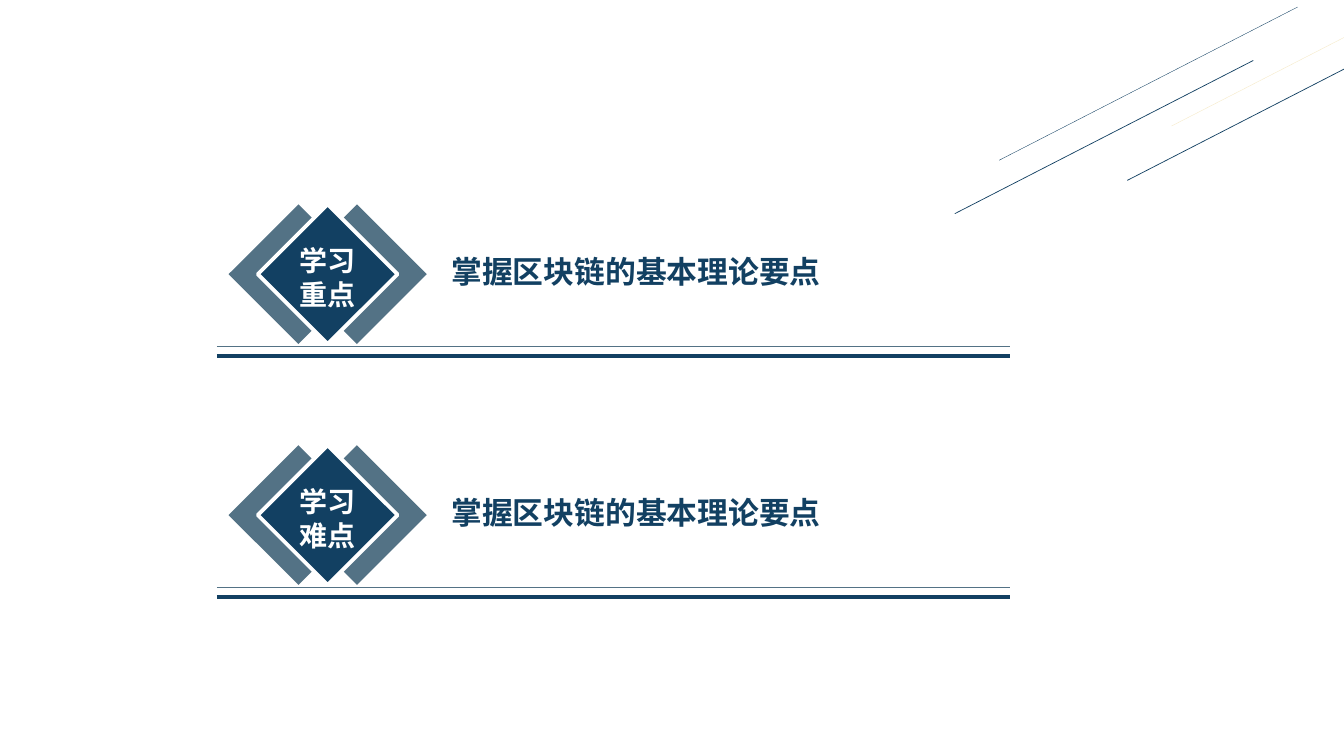
from pptx import Presentation
from pptx.dml.color import RGBColor
from pptx.enum.shapes import MSO_CONNECTOR, MSO_SHAPE
from pptx.enum.text import MSO_AUTO_SIZE, PP_ALIGN
from pptx.oxml.ns import qn
from pptx.util import Inches, Pt
from lxml.etree import SubElement

COLORS = {"navy": "124062", "slate": "537285", "gold": "DCAA1F", "white": "FFFFFF"}
FONT = "Noto Sans CJK SC"


def rgb(name):
    return RGBColor.from_string(COLORS[name])


def add_text(shapes, text, left, top, width, height, *, size, color,
             align=PP_ALIGN.LEFT, spacing=None):
    box = shapes.add_textbox(Inches(left), Inches(top), Inches(width), Inches(height))
    frame = box.text_frame
    frame.text = text
    frame.word_wrap = False
    frame.auto_size = MSO_AUTO_SIZE.SHAPE_TO_FIT_TEXT
    for paragraph in frame.paragraphs:
        paragraph.alignment = align
        if spacing:
            paragraph.line_spacing = spacing
        for run in paragraph.runs:
            run.font.size = Pt(size)
            run.font.bold = True
            run.font.name = FONT
            run.font.color.rgb = rgb(color)
            east_asian = SubElement(run.font._element, qn("a:ea"))
            east_asian.set("typeface", FONT)


def add_line(shapes, x1, y1, x2, y2, color, width, alpha=None):
    line = shapes.add_connector(MSO_CONNECTOR.STRAIGHT, Inches(x1), Inches(y1),
                                Inches(x2), Inches(y2))
    line.line.color.rgb = rgb(color)
    line.line.width = Pt(width)
    properties = line._element.spPr
    if alpha is not None:
        fill = properties.find(".//" + qn("a:srgbClr"))
        SubElement(fill, qn("a:alpha")).set("val", str(alpha * 1000))
    SubElement(properties, qn("a:effectLst"))


def add_diamond(shapes, left, top, side, color, outline=None):
    diamond = shapes.add_shape(MSO_SHAPE.ROUNDED_RECTANGLE, Inches(left), Inches(top),
                               Inches(side), Inches(side))
    diamond.adjustments[0] = 0
    diamond.rotation = 45
    diamond.shadow.inherit = False
    diamond.fill.solid()
    diamond.fill.fore_color.rgb = rgb(color)
    if outline:
        diamond.line.color.rgb = rgb(outline)
        diamond.line.width = Pt(2.75)
    else:
        diamond.line.fill.background()


def add_corner_lines(shapes, left, top):
    """Parallel slanted lines in the top right corner."""
    run, rise = 2.96, 1.52
    strokes = [(0, 0, "navy", 0.5, None), (0.44, -0.53, "navy", 0.25, None),
               (1.71, -0.33, "navy", 0.5, None), (2.15, -0.87, "gold", 0.25, 25)]
    for dx, dy, color, width, alpha in strokes:
        x, y = left + dx, top + dy
        add_line(shapes, x, y, x + run, y - rise, color, width, alpha)


def add_study_point(shapes, left, top, width, label, content):
    """Diamond badge, statement and double rule."""
    side, step = 0.98, 0.29
    badge_left = left + 0.61
    right = left + width

    # Thin rule and side diamonds
    add_line(shapes, left, top + 1.21, right, top + 1.21, "slate", 1)
    for offset in (step, -step):
        add_diamond(shapes, badge_left + offset, top, side, "slate")

    # Labelled badge
    badge = shapes.add_group_shape().shapes
    add_diamond(badge, badge_left, top, side, "navy", outline="white")
    add_text(badge, label, left + 0.72, top + 0.14, 0.76, 0.77,
             size=20, color="white", align=PP_ALIGN.CENTER)

    # Thick rule and statement
    add_line(shapes, left, top + 1.3, right, top + 1.3, "navy", 3)
    add_text(shapes, content, left + 2.23, top + 0.14, 3.87, 0.56,
             size=22, color="navy", spacing=1.25)


def main():
    deck = Presentation()
    deck.slide_width, deck.slide_height = Inches(13.33), Inches(7.5)
    shapes = deck.slides.add_slide(deck.slide_layouts[6]).shapes

    add_corner_lines(shapes, 9.47, 2.12)
    points = [("学习\n重点", "掌握区块链的基本理论要点"),
              ("学习\n难点", "掌握区块链的基本理论要点")]
    for row, (label, content) in enumerate(points):
        add_study_point(shapes, 2.15, 2.23 + row * 2.39, 7.87, label, content)

    deck.save("out.pptx")


if __name__ == "__main__":
    main()
